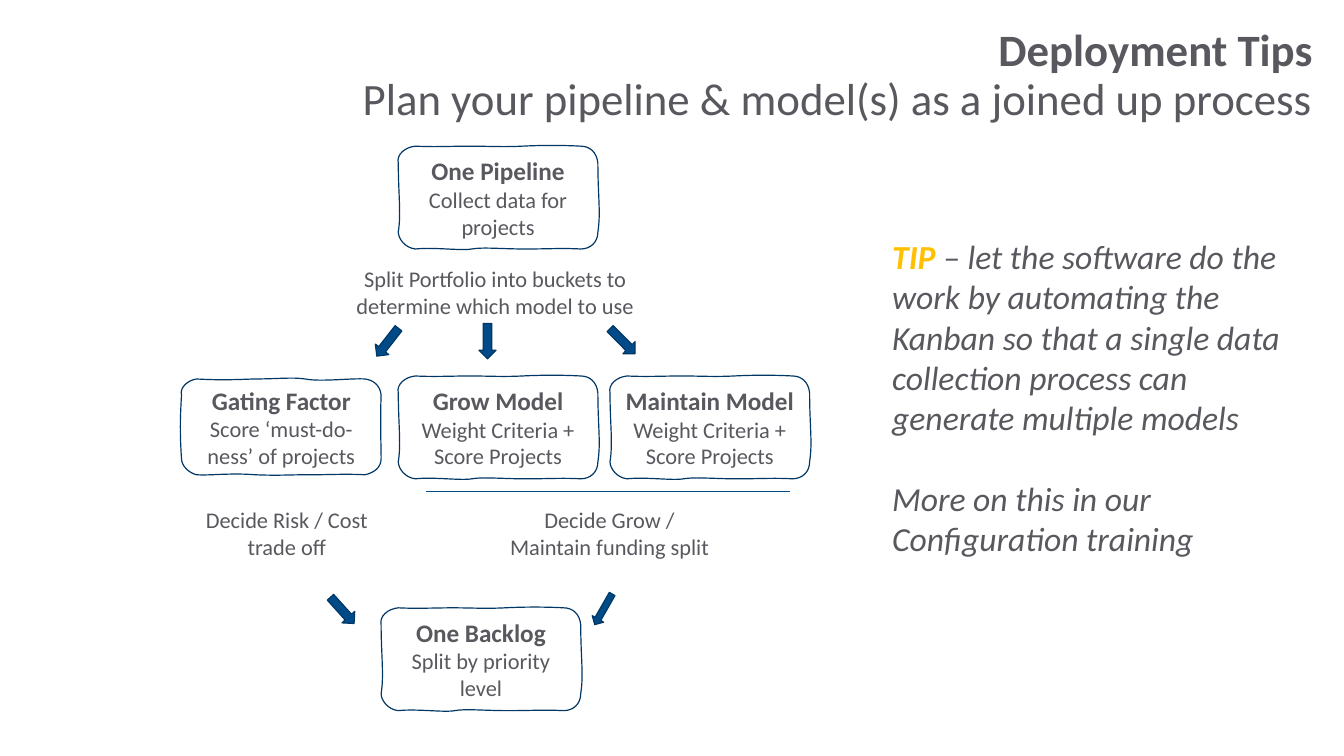
from dataclasses import dataclass

import pptx
import pptx.dml.color
import pptx.enum.shapes
import pptx.enum.text
import pptx.oxml
import pptx.oxml.ns
import pptx.util
from pptx.util import Inches

Align = pptx.enum.text.PP_ALIGN
Anchor = pptx.enum.text.MSO_ANCHOR
Point = tuple[float, float]
DRAWING_NS = pptx.oxml.ns.nsdecls("a")


@dataclass(frozen=True)
class Theme:
    font: str = "Calibri"
    text: str = "59585E"
    navy: str = "003764"
    blue: str = "004A87"
    gold: str = "FFC000"
    white: str = "FFFFFF"
    title_size: int = 32
    tip_size: int = 24
    heading_size: int = 18
    body_size: int = 16
    outline: float = 0.85
    rule: float = 0.75


@dataclass(frozen=True)
class Stage:
    left: float
    top: float
    heading: str
    body: str
    outline: tuple[Point, ...]


@dataclass(frozen=True)
class Label:
    left: float
    top: float
    width: float
    text: str


@dataclass(frozen=True)
class Arrow:
    left: float
    top: float
    rotation: float = 0
    width: float = 0.17
    height: float = 0.35


THEME = Theme()

# Hand-drawn outlines: a start point, then three Bezier points per curve
TALL: tuple[Point, ...] = (
    (0, 0.17),
    (-0.02, 0.08), (0.07, 0.01), (0.17, 0),
    (0.36, 0.01), (0.53, 0), (0.71, 0),
    (0.9, 0), (1.03, 0.01), (1.23, 0),
    (1.42, -0.01), (1.63, -0.01), (1.81, 0),
    (1.9, 0), (1.97, 0.06), (1.98, 0.17),
    (1.98, 0.5), (2.01, 0.66), (1.98, 0.85),
    (1.98, 0.96), (1.9, 1.02), (1.81, 1.02),
    (1.61, 1.01), (1.51, 1.02), (1.26, 1.02),
    (1.02, 1.02), (0.84, 1), (0.73, 1.02),
    (0.62, 1.04), (0.36, 1), (0.17, 1.02),
    (0.07, 1.01), (0, 0.92), (0, 0.85),
    (0.03, 0.68), (0, 0.45), (0, 0.17),
)
SHORT: tuple[Point, ...] = (
    (0, 0.16),
    (-0.02, 0.08), (0.07, 0.01), (0.15, 0),
    (0.34, 0.01), (0.47, 0.01), (0.71, 0),
    (0.95, 0), (1.1, -0.02), (1.23, 0),
    (1.37, 0.03), (1.7, -0.01), (1.82, 0),
    (1.9, 0.01), (1.97, 0.06), (1.98, 0.16),
    (1.97, 0.44), (1.98, 0.65), (1.98, 0.79),
    (1.98, 0.88), (1.91, 0.93), (1.82, 0.95),
    (1.61, 0.94), (1.5, 0.95), (1.27, 0.95),
    (1.04, 0.95), (0.97, 0.96), (0.73, 0.95),
    (0.48, 0.93), (0.27, 0.96), (0.15, 0.95),
    (0.07, 0.93), (0, 0.86), (0, 0.79),
    (-0.02, 0.49), (-0.01, 0.35), (0, 0.16),
)

MODEL_STEPS = "Weight Criteria +\nScore Projects"
STAGES = (
    Stage(1.8, 3.76, "Gating Factor", "Score ‘must-do-ness’ of projects", SHORT),
    Stage(3.95, 3.73, "Grow Model", MODEL_STEPS, TALL),
    Stage(6.05, 3.73, "Maintain Model", MODEL_STEPS, TALL),
    Stage(3.95, 1.45, "One Pipeline", "Collect data for projects", TALL),
    Stage(3.78, 6.03, "One Backlog", "Split by priority level", TALL),
)
LABELS = (
    Label(3.34, 2.58, 3.14, "Split Portfolio into buckets to determine which model to use"),
    Label(1.93, 4.97, 1.83, "Decide Risk / Cost trade off"),
    Label(4.92, 4.97, 2.25, "Decide Grow / Maintain funding split"),
)
ARROWS = (
    Arrow(4.75, 3.21),
    Arrow(3.76, 3.22, 38),
    Arrow(6.09, 3.21, 315.1),
    Arrow(3.31, 5.88, 318),
    Arrow(5.92, 5.87, 29.7, width=0.13),
)


def rgb(code: str) -> pptx.dml.color.RGBColor:
    return pptx.dml.color.RGBColor.from_string(code)


def style_run(run, size: int, color: str = THEME.text, bold: bool = False, italic: bool = False) -> None:
    run.font.name = THEME.font
    run.font.size = pptx.util.Pt(size)
    run.font.bold = bold
    run.font.italic = italic
    run.font.color.rgb = rgb(color)


def style_text(frame, align: Align, head_size: int, size: int, bold_head: bool = True) -> None:
    """Format every run, with the first one as the heading."""
    frame.word_wrap = True
    runs = []
    for paragraph in frame.paragraphs:
        paragraph.alignment = align
        runs.extend(paragraph.runs)
    for index, run in enumerate(runs):
        is_head = bold_head and index == 0
        style_run(run, head_size if is_head else size, bold=is_head)


def style_line(line, color: str, width: float) -> None:
    line.color.rgb = rgb(color)
    line.width = pptx.util.Pt(width)


def bend_sides(box, outline: tuple[Point, ...]) -> None:
    """Turn each straight side into the curve that the outline gives."""
    sides = box._element.findall(".//" + pptx.oxml.ns.qn("a:lnTo"))
    for index, side in enumerate(sides):
        curve = outline[3 * index + 1:3 * index + 4]
        points = "".join(f'<a:pt x="{Inches(x)}" y="{Inches(y)}"/>' for x, y in curve)
        side.getparent().replace(side, pptx.oxml.parse_xml(
            f"<a:cubicBezTo {DRAWING_NS}>{points}</a:cubicBezTo>"))


def draw_title(shapes) -> None:
    title = shapes.add_shape(pptx.enum.shapes.MSO_SHAPE.RECTANGLE,
                             Inches(1.61), Inches(0.1), Inches(11.51), Inches(1.32))
    title.shadow.inherit = False
    title.line.fill.background()
    title.fill.solid()
    title.fill.fore_color.rgb = rgb(THEME.white)
    # Make the panel 70 % opaque
    color = title._element.spPr.find(".//" + pptx.oxml.ns.qn("a:srgbClr"))
    color.append(pptx.oxml.parse_xml(f'<a:alpha {DRAWING_NS} val="70000"/>'))
    frame = title.text_frame
    frame.text = "Deployment Tips\vPlan your pipeline & model(s) as a joined up process"
    frame.vertical_anchor = Anchor.MIDDLE
    style_text(frame, Align.RIGHT, THEME.title_size, THEME.title_size)
    frame.paragraphs[0].line_spacing = 0.9


def draw_stage(shapes, stage: Stage) -> None:
    corners = [(Inches(stage.left + x), Inches(stage.top + y)) for x, y in stage.outline[::3]]
    builder = shapes.build_freeform(*corners[0])
    builder.add_line_segments(corners[1:], close=True)
    box = builder.convert_to_shape()
    bend_sides(box, stage.outline)
    box.shadow.inherit = False
    box.fill.background()
    style_line(box.line, THEME.navy, THEME.outline)
    box.text_frame.text = f"{stage.heading}\v{stage.body}"
    box.text_frame.vertical_anchor = Anchor.MIDDLE
    style_text(box.text_frame, Align.CENTER, THEME.heading_size, THEME.body_size)


def draw_label(shapes, label: Label) -> None:
    frame = shapes.add_textbox(Inches(label.left), Inches(label.top),
                               Inches(label.width), Inches(0.64)).text_frame
    frame.text = label.text
    frame.auto_size = pptx.enum.text.MSO_AUTO_SIZE.SHAPE_TO_FIT_TEXT
    style_text(frame, Align.CENTER, THEME.body_size, THEME.body_size, bold_head=False)


def draw_arrow(shapes, arrow: Arrow) -> None:
    pointer = shapes.add_shape(pptx.enum.shapes.MSO_SHAPE.DOWN_ARROW, Inches(arrow.left),
                               Inches(arrow.top), Inches(arrow.width), Inches(arrow.height))
    pointer.shadow.inherit = False
    pointer.rotation = arrow.rotation
    pointer.fill.solid()
    pointer.fill.fore_color.rgb = rgb(THEME.blue)
    style_line(pointer.line, THEME.navy, THEME.outline)


def draw_models_rule(shapes) -> None:
    rule = shapes.add_connector(pptx.enum.shapes.MSO_CONNECTOR.STRAIGHT,
                                Inches(4.23), Inches(4.88), Inches(7.84), Inches(4.88))
    style_line(rule.line, THEME.blue, THEME.rule)
    rule._element.spPr.append(pptx.oxml.parse_xml(f"<a:effectLst {DRAWING_NS}/>"))


def draw_tip(shapes) -> None:
    frame = shapes.add_textbox(Inches(8.75), Inches(2.29), Inches(4.38), Inches(3.33)).text_frame
    frame.word_wrap = True
    frame.auto_size = pptx.enum.text.MSO_AUTO_SIZE.SHAPE_TO_FIT_TEXT
    frame.text = "TIP\nMore on this in our Configuration training"
    advice, training = frame.paragraphs
    advice.add_run().text = (" – let the software do the work by automating the Kanban so that "
                             "a single data collection process can generate multiple models")
    training.space_before = pptx.util.Pt(29)
    style_run(advice.runs[0], THEME.tip_size, THEME.gold, bold=True, italic=True)
    for run in (advice.runs[1], training.runs[0]):
        style_run(run, THEME.tip_size, italic=True)


def main() -> None:
    deck = pptx.Presentation()
    deck.slide_width, deck.slide_height = Inches(13.33), Inches(7.5)
    shapes = deck.slides.add_slide(deck.slide_layouts[6]).shapes
    draw_title(shapes)
    # Process flow
    for stage in STAGES:
        draw_stage(shapes, stage)
    for label in LABELS:
        draw_label(shapes, label)
    draw_models_rule(shapes)
    for arrow in ARROWS:
        draw_arrow(shapes, arrow)
    # Side advice
    draw_tip(shapes)
    deck.save("out.pptx")


if __name__ == "__main__":
    main()
